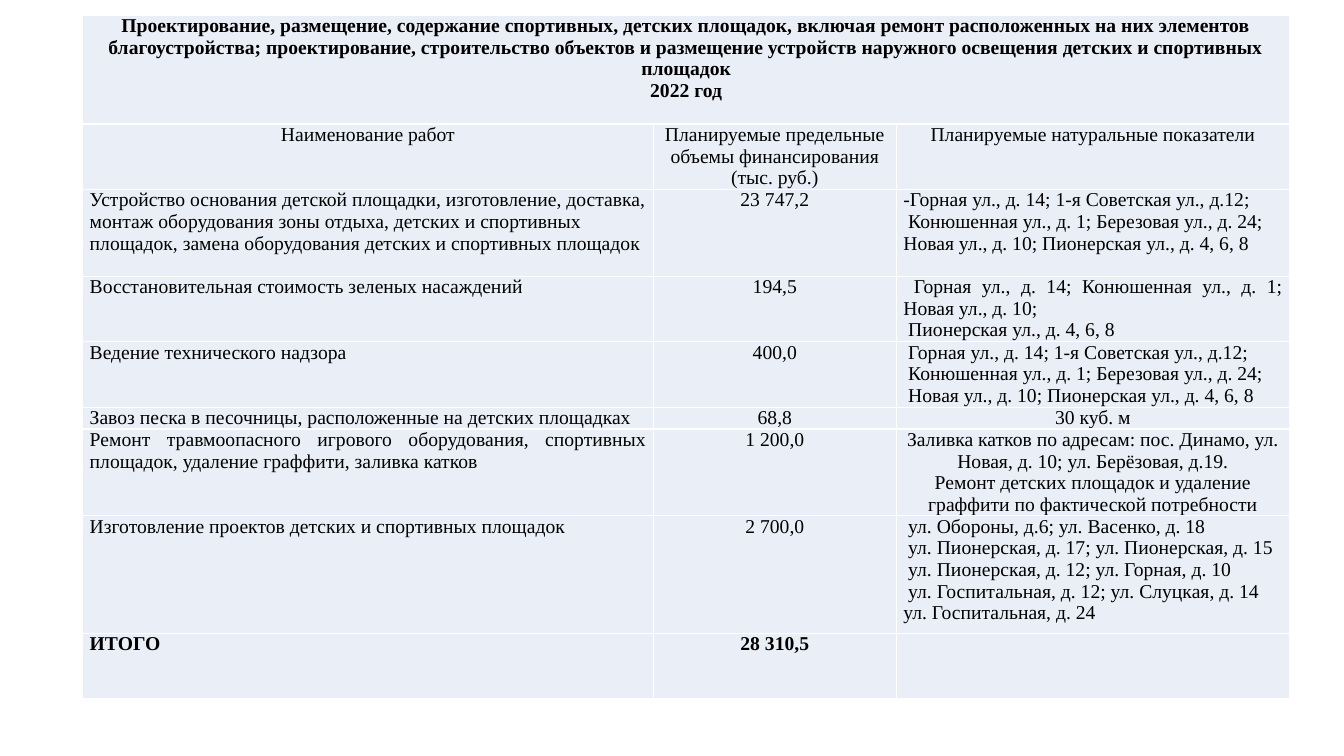
import pptx
import pptx.util
import pptx.dml.color
import pptx.enum.text
import pptx.oxml.ns
from lxml import etree

Inches = pptx.util.Inches
Align = pptx.enum.text.PP_ALIGN
BLACK = pptx.dml.color.RGBColor(0x00, 0x00, 0x00)
WHITE = pptx.dml.color.RGBColor(0xFF, 0xFF, 0xFF)
PALE = pptx.dml.color.RGBColor(0xEA, 0xEF, 0xF7)
L, C, J = Align.LEFT, Align.CENTER, Align.JUSTIFY

# Table content: each cell is its text and alignment
TITLE = (
    "Проектирование, размещение, содержание спортивных, детских площадок, "
    "включая ремонт расположенных на них элементов благоустройства; "
    "проектирование, строительство объектов и размещение устройств наружного "
    "освещения детских и спортивных площадок\n2022 год"
)
ROWS = [
    [(TITLE, C), ("", C), ("", C)],
    [("Наименование работ", C),
     ("Планируемые предельные объемы финансирования\n(тыс. руб.)", C),
     ("Планируемые натуральные показатели", C)],
    [("Устройство основания детской площадки, изготовление, доставка, монтаж "
      "оборудования зоны отдыха, детских и спортивных площадок, замена "
      "оборудования детских и спортивных площадок", L),
     ("23 747,2", C),
     ("-Горная ул., д. 14; 1-я Советская ул., д.12;\n"
      " Конюшенная ул., д. 1; Березовая ул., д. 24;\n"
      "Новая ул., д. 10; Пионерская ул., д. 4, 6, 8", J)],
    [("Восстановительная стоимость зеленых насаждений", L),
     ("194,5", C),
     (" Горная ул., д. 14; Конюшенная ул., д. 1; Новая ул., д. 10;\n"
      " Пионерская ул., д. 4, 6, 8", J)],
    [("Ведение технического надзора", L),
     ("400,0", C),
     (" Горная ул., д. 14; 1-я Советская ул., д.12;\n"
      " Конюшенная ул., д. 1; Березовая ул., д. 24;\n"
      " Новая ул., д. 10; Пионерская ул., д. 4, 6, 8", J)],
    [("Завоз песка в песочницы, расположенные на детских площадках", L),
     ("68,8", C),
     ("30 куб. м", C)],
    [("Ремонт травмоопасного игрового оборудования, спортивных площадок, "
      "удаление граффити, заливка катков", J),
     ("1 200,0", C),
     ("Заливка катков по адресам: пос. Динамо, ул. Новая, д. 10; "
      "ул. Берёзовая, д.19.\n"
      "Ремонт детских площадок и удаление граффити по фактической "
      "потребности", C)],
    [("Изготовление проектов детских и спортивных площадок", L),
     ("2 700,0", C),
     (" ул. Обороны, д.6; ул. Васенко, д. 18\n"
      " ул. Пионерская, д. 17; ул. Пионерская, д. 15\n"
      " ул. Пионерская, д. 12; ул. Горная, д. 10\n"
      " ул. Госпитальная, д. 12; ул. Слуцкая, д. 14\n"
      "ул. Госпитальная, д. 24", J)],
    [("ИТОГО", J), ("28 310,5", C), ("", L)],
]
WIDTHS = [5.66, 2.41, 3.9]
HEIGHTS = [1.08, 0.65, 0.86, 0.65, 0.65, 0.21, 0.86, 1.17, 0.65]
BOLD = (0, len(ROWS) - 1)


def edge(cell):
    """Draw thin white lines on the four sides of a cell."""
    props = cell._tc.get_or_add_tcPr()
    for spot, side in enumerate(("lnL", "lnR", "lnT", "lnB")):
        line = etree.Element(pptx.oxml.ns.qn("a:" + side), w="12700")
        fill = etree.SubElement(line, pptx.oxml.ns.qn("a:solidFill"))
        etree.SubElement(fill, pptx.oxml.ns.qn("a:srgbClr"), val=str(WHITE))
        props.insert(spot, line)


# Slide
deck = pptx.Presentation()
deck.slide_width = Inches(13.33)
deck.slide_height = Inches(7.5)
slide = deck.slides.add_slide(deck.slide_layouts[6])

# Table grid
frame = slide.shapes.add_table(
    len(ROWS), len(WIDTHS), Inches(0.82), Inches(0.15),
    Inches(sum(WIDTHS)), Inches(sum(HEIGHTS)))
table = frame.table
for col, width in zip(table.columns, WIDTHS):
    col.width = Inches(width)
for row, height in zip(table.rows, HEIGHTS):
    row.height = Inches(height)
table.cell(0, 0).merge(table.cell(0, 2))

# Cells
for r, row in enumerate(ROWS):
    for c, (text, align) in enumerate(row):
        cell = table.cell(r, c)
        cell.fill.solid()
        cell.fill.fore_color.rgb = PALE
        edge(cell)
        cell.margin_left = cell.margin_right = Inches(0.04 if r < 2 else 0.07)
        cell.margin_top = cell.margin_bottom = 0
        cell.text_frame.text = text
        for para in cell.text_frame.paragraphs:
            para.alignment = align
            para.font.size = pptx.util.Pt(14)
            for run in para.runs:
                run.font.name = "Times New Roman"
                run.font.size = pptx.util.Pt(14)
                run.font.bold = r in BOLD
                run.font.color.rgb = BLACK

deck.save("out.pptx")
